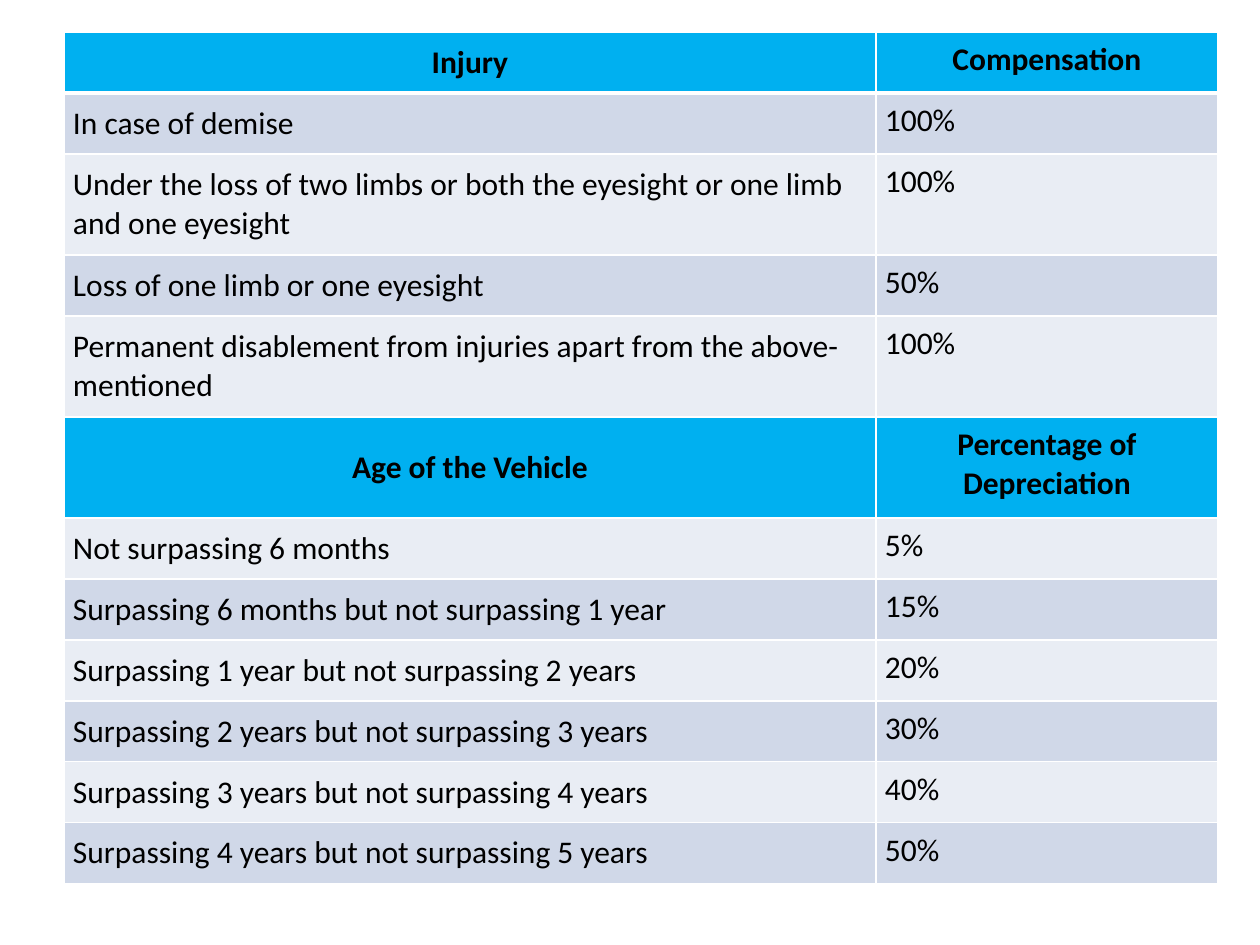
"""Build a slide with a table of injury compensation and vehicle depreciation."""
from dataclasses import dataclass

from lxml import etree
from pptx import Presentation
from pptx.dml.color import RGBColor
from pptx.enum.text import MSO_ANCHOR, PP_ALIGN
from pptx.oxml.ns import qn
from pptx.util import Emu, Pt

CENTER, LEFT = PP_ALIGN.CENTER, PP_ALIGN.LEFT
MIDDLE, TOP = MSO_ANCHOR.MIDDLE, MSO_ANCHOR.TOP
PX = 914400 / 126
COLORS = {
    "header": "00B0F0",
    "band_dark": "D0D8E8",
    "band_light": "E9EDF4",
    "text": "000000",
    "border": "FFFFFF",
}
FONT, FONT_SIZE = "Calibri", 18
TABLE_LEFT, TABLE_TOP = 64, 32
COLUMN_WIDTHS = (812, 342)
ROW_HEIGHT, TALL_ROW_HEIGHT = 61, 101
CELL_MARGIN = 9
THIN_BORDER, THICK_BORDER = 1, 3


@dataclass(frozen=True)
class TableRow:
    """Wording and kind of one table row."""

    label: str
    value: str
    header: bool = False
    tall: bool = False

    @property
    def height(self) -> int:
        """Return the row height in px."""
        return TALL_ROW_HEIGHT if self.tall else ROW_HEIGHT


ROWS = (
    TableRow("Injury", "Compensation", header=True),
    TableRow("In case of demise", "100%"),
    TableRow(
        "Under the loss of two limbs or both the eyesight or one limb and one eyesight",
        "100%",
        tall=True,
    ),
    TableRow("Loss of one limb or one eyesight", "50%"),
    TableRow(
        "Permanent disablement from injuries apart from the above-mentioned",
        "100%",
        tall=True,
    ),
    TableRow("Age of the Vehicle", "Percentage of Depreciation", header=True, tall=True),
    TableRow("Not surpassing 6 months", "5%"),
    TableRow("Surpassing 6 months but not surpassing 1 year", "15%"),
    TableRow("Surpassing 1 year but not surpassing 2 years", "20%"),
    TableRow("Surpassing 2 years but not surpassing 3 years", "30%"),
    TableRow("Surpassing 3 years but not surpassing 4 years", "40%"),
    TableRow("Surpassing 4 years but not surpassing 5 years", "50%"),
)


def px(length: int) -> Emu:
    """Turn px into EMU."""
    return Emu(round(length * PX))


def add_borders(cell, row_index: int) -> None:
    """Draw the cell's borders, with a thick line below the first row."""
    widths = {
        "L": THIN_BORDER,
        "R": THIN_BORDER,
        "T": THICK_BORDER if row_index == 1 else THIN_BORDER,
        "B": THICK_BORDER if row_index == 0 else THIN_BORDER,
    }
    properties = cell._tc.get_or_add_tcPr()
    for side, width in widths.items():
        line = etree.SubElement(properties, qn(f"a:ln{side}"), w=str(Pt(width)))
        fill = etree.SubElement(line, qn("a:solidFill"))
        etree.SubElement(fill, qn("a:srgbClr"), val=COLORS["border"])


def fill_cell(cell, text: str, header: bool, anchor: MSO_ANCHOR, row_index: int) -> None:
    """Write and format one cell."""
    add_borders(cell, row_index)
    band = "band_dark" if row_index % 2 else "band_light"
    cell.fill.solid()
    cell.fill.fore_color.rgb = RGBColor.from_string(COLORS["header" if header else band])
    cell.margin_left = cell.margin_right = px(CELL_MARGIN)
    cell.margin_top = cell.margin_bottom = px(CELL_MARGIN)
    cell.vertical_anchor = anchor
    cell.text_frame.text = text
    para = cell.text_frame.paragraphs[0]
    para.alignment = CENTER if header else LEFT
    font = para.runs[0].font
    font.name, font.size, font.bold = FONT, Pt(FONT_SIZE), header
    font.color.rgb = RGBColor.from_string(COLORS["text"])


def add_rates_table(page, rows: tuple[TableRow, ...]) -> None:
    """Add the table and fill it row by row."""
    table = page.shapes.add_table(
        len(rows),
        len(COLUMN_WIDTHS),
        px(TABLE_LEFT),
        px(TABLE_TOP),
        px(sum(COLUMN_WIDTHS)),
        px(sum(row.height for row in rows)),
    ).table
    for column, width in zip(table.columns, COLUMN_WIDTHS):
        column.width = px(width)
    for index, row in enumerate(rows):
        table.rows[index].height = px(row.height)
        fill_cell(table.cell(index, 0), row.label, row.header, MIDDLE, index)
        fill_cell(table.cell(index, 1), row.value, row.header, TOP, index)


def main() -> None:
    """Build and save the deck."""
    deck = Presentation()
    deck.slide_width, deck.slide_height = px(1260), px(945)
    page = deck.slides.add_slide(deck.slide_layouts[6])
    add_rates_table(page, ROWS)
    deck.save("out.pptx")


if __name__ == "__main__":
    main()
